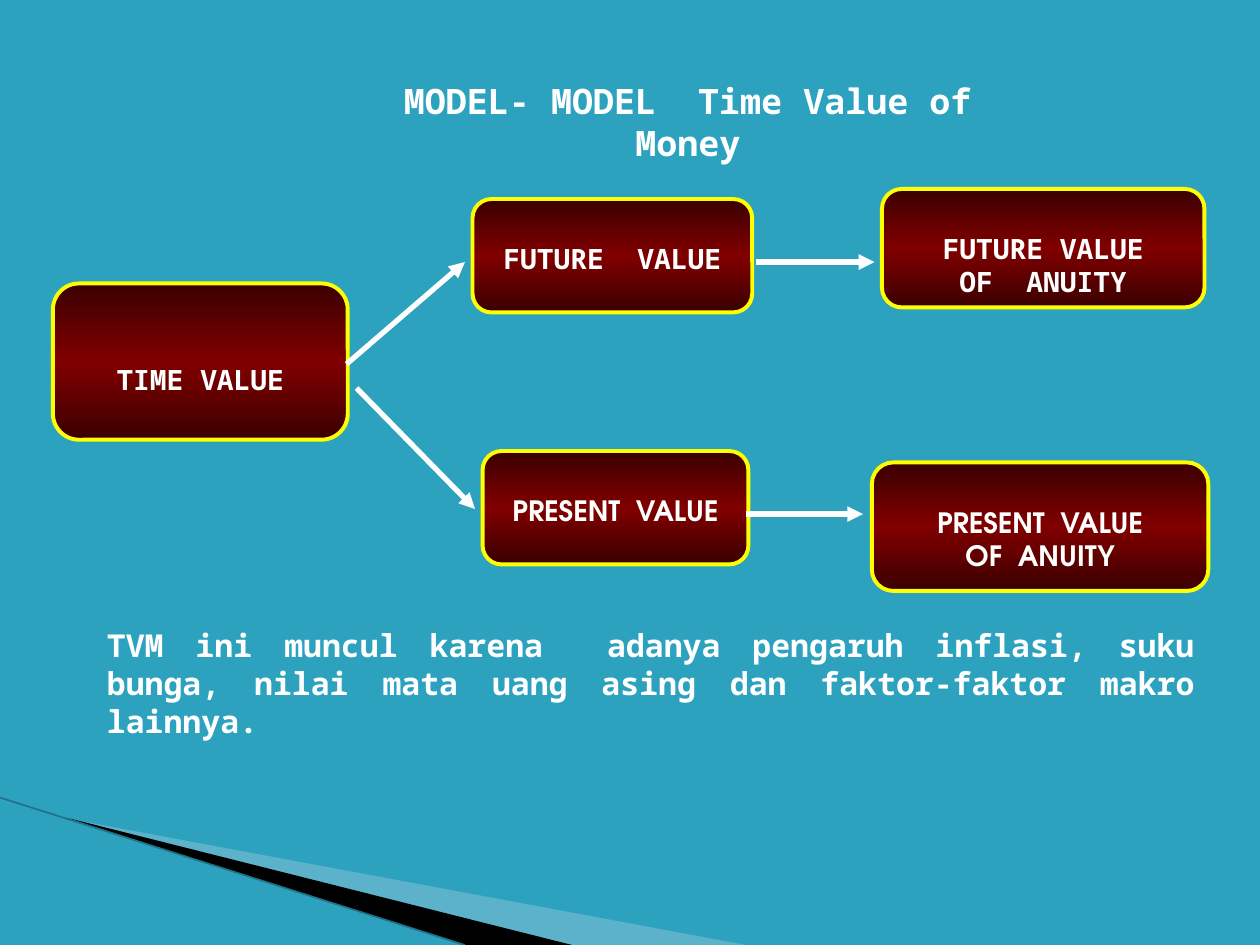
from lxml import etree
from pptx import Presentation
from pptx.dml.color import RGBColor
from pptx.enum.shapes import MSO_CONNECTOR, MSO_SHAPE
from pptx.enum.text import MSO_ANCHOR, MSO_AUTO_SIZE, PP_ALIGN
from pptx.oxml import parse_xml
from pptx.oxml.ns import nsdecls, qn
from pptx.util import Inches, Pt

STRAIGHT = MSO_CONNECTOR.STRAIGHT
ROUNDED = MSO_SHAPE.ROUNDED_RECTANGLE
TOP = MSO_ANCHOR.TOP
CENTER, JUSTIFY = PP_ALIGN.CENTER, PP_ALIGN.JUSTIFY
MONO, ADVENTOR = "Noto Sans Mono", "TeX Gyre Adventor"

COLORS = {
    "background": "2DA2BF", "text": "FFFFFF", "border": "FFFF00",
    "box_edge": "3B0000", "box_middle": "800000",
    "light_wedge": "A0CBDC", "dark_wedge": "000000", "thin_line": "1F7288",
}

TITLE = "MODEL- MODEL  Time Value of Money"
NOTE = ("TVM ini muncul karena  adanya pengaruh inflasi, suku bunga, "
        "nilai mata uang asing dan faktor-faktor makro lainnya. ")

# (left, top, width, height), lines, font, space above the text
BOXES = [
    ((0.42, 2.25, 2.34, 1.24), ["TIME VALUE"], MONO, 0.57),
    ((3.75, 1.58, 2.22, 0.9), ["FUTURE  VALUE"], MONO, 0.29),
    ((3.83, 3.58, 2.11, 0.9), ["PRESENT  VALUE"], ADVENTOR, 0.29),
    ((7, 1.5, 2.56, 0.94), ["FUTURE VALUE", "OF  ANUITY"], MONO, 0.29),
    ((6.92, 3.67, 2.67, 1.02), ["PRESENT  VALUE", "OF  ANUITY"], ADVENTOR, 0.29),
]
ARROWS = [
    (2.75, 2.89, 3.69, 2.08),
    (2.83, 3.08, 3.77, 4.04),
    (6, 2.08, 6.94, 2.08),
    (5.92, 4.08, 6.85, 4.08),
]
# corner points, colour, opacity in percent
WEDGES = [
    ([(0.55, 6.5), (5.92, 7.5), (4.54, 7.5)], "light_wedge", 40),
    ([(0.53, 6.49), (4.54, 7.5), (3.68, 7.5)], "dark_wedge", 100),
]


def color(name):
    return RGBColor.from_string(COLORS[name])


def write(shape, lines, size, font, align, insets=(0.1, 0.05, 0.1, 0.05)):
    frame = shape.text_frame
    frame.word_wrap = True
    frame.auto_size = MSO_AUTO_SIZE.NONE
    frame.vertical_anchor = TOP
    (frame.margin_left, frame.margin_top,
     frame.margin_right, frame.margin_bottom) = map(Inches, insets)
    frame.text = "\n".join(lines)
    for para in frame.paragraphs:
        para.alignment = align
        para.line_spacing = 1.0
        para.space_before = Pt(0)
        para.font.name = font
        para.font.size = Pt(size)
        para.font.bold = True
        para.font.color.rgb = color("text")


def add_wedge(page, points, fill, opacity):
    corners = [(Inches(x), Inches(y)) for x, y in points]
    builder = page.shapes.build_freeform(*corners[0])
    builder.add_line_segments(corners[1:], close=True)
    wedge = builder.convert_to_shape()
    wedge.shadow.inherit = False
    wedge.fill.solid()
    wedge.fill.fore_color.rgb = color(fill)
    wedge.line.fill.background()
    if opacity < 100:
        shade = wedge.fill._xPr.find(".//" + qn("a:srgbClr"))
        etree.SubElement(shade, qn("a:alpha"), val=str(opacity * 1000))


def add_line(page, ends, name, width, arrow=False):
    line = page.shapes.add_connector(STRAIGHT, *map(Inches, ends))
    line.line.color.rgb = color(name)
    line.line.width = Pt(width)
    if arrow:
        etree.SubElement(line.line._get_or_add_ln(), qn("a:tailEnd"), type="triangle")
    etree.SubElement(line._element.spPr, qn("a:effectLst"))


def add_box(page, place, lines, font, space_above):
    box = page.shapes.add_shape(ROUNDED, *map(Inches, place))
    box.shadow.inherit = False
    box.line.color.rgb = color("border")
    box.line.width = Pt(2.25)
    stops = "".join(
        f'<a:gs pos="{pos}"><a:srgbClr val="{COLORS[name]}"/></a:gs>'
        for pos, name in [(0, "box_edge"), (50000, "box_middle"), (100000, "box_edge")])
    gradient = parse_xml(
        f'<a:gradFill {nsdecls("a")} rotWithShape="1"><a:gsLst>{stops}</a:gsLst>'
        '<a:lin ang="5400000" scaled="1"/></a:gradFill>')
    box._element.spPr.find(qn("a:prstGeom")).addnext(gradient)
    write(box, lines, 16, font, CENTER, (0.01, space_above, 0.01, 0.01))


def main():
    deck = Presentation()
    deck.slide_width, deck.slide_height = Inches(10), Inches(7.5)
    page = deck.slides.add_slide(deck.slide_layouts[5])
    page.background.fill.solid()
    page.background.fill.fore_color.rgb = color("background")

    # Corner decoration
    for wedge in WEDGES:
        add_wedge(page, *wedge)
    add_line(page, (0, 6.33, 3.69, 7.5), "thin_line", 0.95)

    # Title
    title = page.shapes.title
    title.left, title.top, title.width, title.height = map(Inches, (2.67, 0.58, 5.58, 0.44))
    write(title, [TITLE], 20, MONO, CENTER)

    # Diagram
    for box in BOXES:
        add_box(page, *box)
    for ends in ARROWS:
        add_line(page, ends, "text", 3, arrow=True)

    # Explanation
    note = page.shapes.add_textbox(*map(Inches, (0.75, 4.92, 8.83, 0.71)))
    write(note, [NOTE], 18, MONO, JUSTIFY)

    deck.save("out.pptx")


if __name__ == "__main__":
    main()
